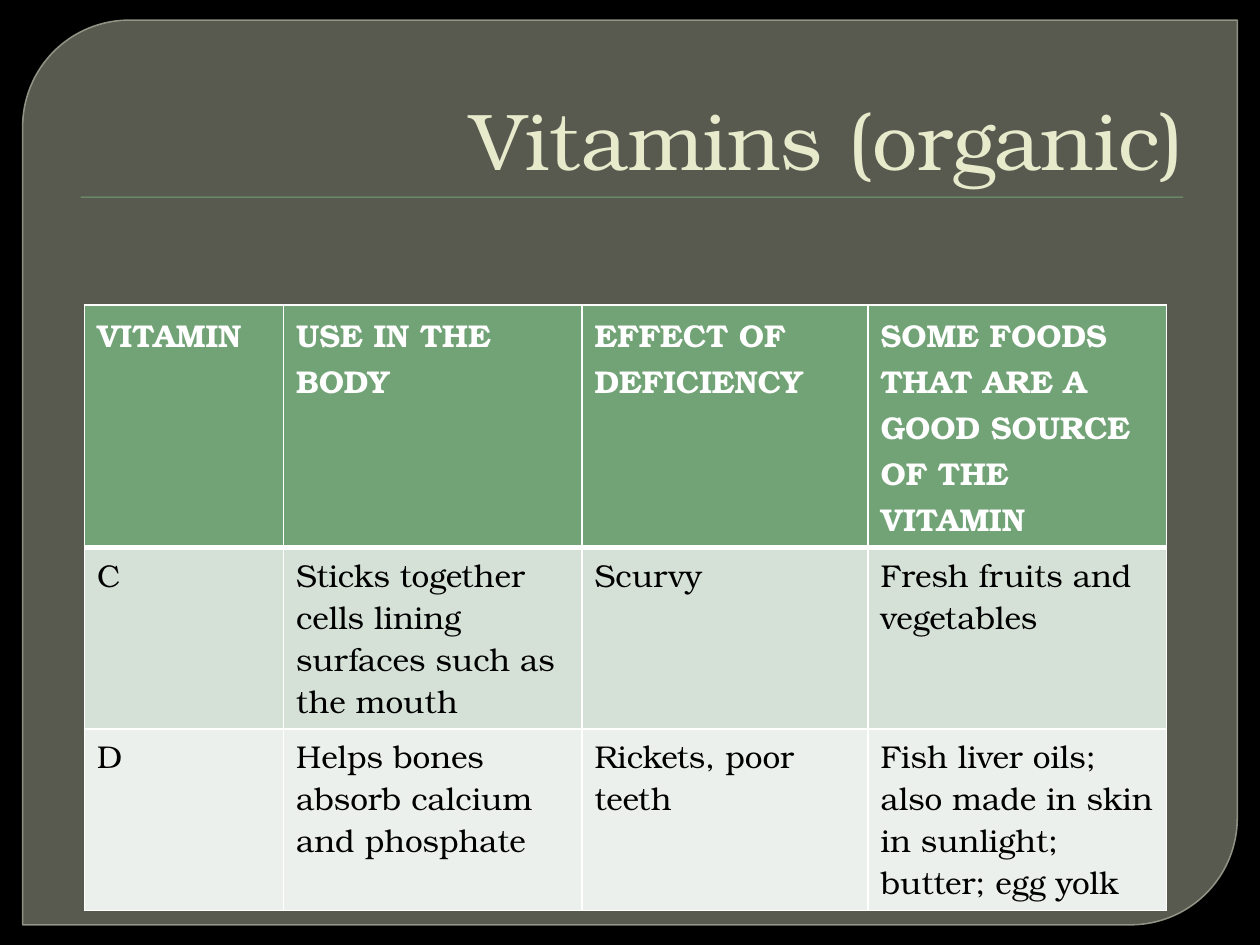
"""Builds a slide with a table of vitamins, their uses and their sources."""
import pptx
import pptx.util
import pptx.dml.color
import pptx.enum.shapes
import pptx.enum.text
import pptx.oxml
import pptx.oxml.ns
from lxml import etree

Inches = pptx.util.Inches
Pt = pptx.util.Pt

TITLE = "Vitamins (organic)"
ROWS = [
    ("VITAMIN", "USE IN THE BODY", "EFFECT OF DEFICIENCY",
     "SOME FOODS THAT ARE A GOOD SOURCE OF THE VITAMIN"),
    ("C", "Sticks together cells lining surfaces such as the mouth", "Scurvy",
     "Fresh fruits and vegetables"),
    ("D", "Helps bones absorb calcium and phosphate", "Rickets, poor teeth",
     "Fish liver oils; also made in skin in sunlight; butter; egg yolk"),
]
COLUMN_WIDTHS = [1.58, 2.37, 2.27, 2.37]
ROW_HEIGHTS = [1.92, 1.44, 1.44]
FONT = "TeX Gyre Bonum"
COLORS = {
    "background": "000000", "panel": "888B7B", "panel_line": "9DA090",
    "green": "72A376", "title": "E7EACB", "white": "FFFFFF", "black": "000000",
    "band_dark": "D5E0D6", "band_light": "EBF0EC",
}
ROW_FILLS = ["green", "band_dark", "band_light"]


def rgb(name):
    return pptx.dml.color.RGBColor.from_string(COLORS[name])


def paint(fill, name, opacity=100):
    fill.solid()
    fill.fore_color.rgb = rgb(name)
    if opacity < 100:
        color = fill._xPr.find(".//" + pptx.oxml.ns.qn("a:srgbClr"))
        etree.SubElement(color, pptx.oxml.ns.qn("a:alpha"), val=str(opacity * 1000))


def format_font(font, color, **values):
    for name, value in {"name": FONT, **values}.items():
        setattr(font, name, value)
    font.color.rgb = rgb(color)


def add_box(slide, kind, box, color, opacity=100):
    shape = slide.shapes.add_shape(kind, *map(Inches, box))
    shape.shadow.inherit = False
    paint(shape.fill, color, opacity)
    return shape


def add_borders(cell, widths):
    properties = cell._tc.get_or_add_tcPr()
    for side, width in widths.items():
        properties.append(pptx.oxml.parse_xml(
            f'<a:ln{side} {pptx.oxml.ns.nsdecls("a")} w="{Pt(width)}"><a:solidFill>'
            f'<a:srgbClr val="{COLORS["white"]}"/></a:solidFill></a:ln{side}>'))


def add_backdrop(slide):
    paint(slide.background.fill, "background")
    kinds = pptx.enum.shapes.MSO_SHAPE
    panel = add_box(slide, kinds.ROUND_2_DIAG_RECTANGLE, (0.18, 0.16, 9.64, 7.18), "panel", 65)
    panel.adjustments[0] = 0.118
    panel.adjustments[1] = 0
    panel.line.width = Pt(0.87)
    paint(panel.line.fill, "panel_line", 88)
    rule = add_box(slide, kinds.RECTANGLE, (0.64, 1.56, 8.75, 0.01), "green")
    rule.line.fill.background()


def place_title(slide):
    title = slide.shapes.title
    slide.shapes._spTree.append(title._element)
    box = dict(left=0.5, top=0.28, width=9, height=1.25)
    for name, value in box.items():
        setattr(title, name, Inches(value))
    frame = title.text_frame
    frame.text = TITLE
    frame.word_wrap = True
    frame.vertical_anchor = pptx.enum.text.MSO_ANCHOR.BOTTOM
    paragraph = frame.paragraphs[0]
    paragraph.alignment = pptx.enum.text.PP_ALIGN.RIGHT
    format_font(paragraph.runs[0].font, "title", size=Pt(46))


def add_vitamin_table(slide):
    table = slide.shapes.add_table(
        len(ROWS), len(COLUMN_WIDTHS), Inches(0.67), Inches(2.42),
        Inches(sum(COLUMN_WIDTHS)), Inches(sum(ROW_HEIGHTS))).table
    for column, width in zip(table.columns, COLUMN_WIDTHS):
        column.width = Inches(width)
    for index, texts in enumerate(ROWS):
        table.rows[index].height = Inches(ROW_HEIGHTS[index])
        is_header = index == 0
        widths = {"L": 1, "R": 1, "T": 3 if index == 1 else 1, "B": 3 if is_header else 1}
        for cell, text in zip(table.rows[index].cells, texts):
            cell.text = text
            add_borders(cell, widths)
            paint(cell.fill, ROW_FILLS[index])
            format_font(cell.text_frame.paragraphs[0].runs[0].font,
                        "white" if is_header else "black", size=Pt(18), bold=is_header)


def main():
    presentation = pptx.Presentation()
    presentation.slide_width = Inches(10)
    presentation.slide_height = Inches(7.5)
    slide = presentation.slides.add_slide(presentation.slide_layouts.get_by_name("Title Only"))
    add_backdrop(slide)
    place_title(slide)
    add_vitamin_table(slide)
    presentation.save("out.pptx")


if __name__ == "__main__":
    main()
